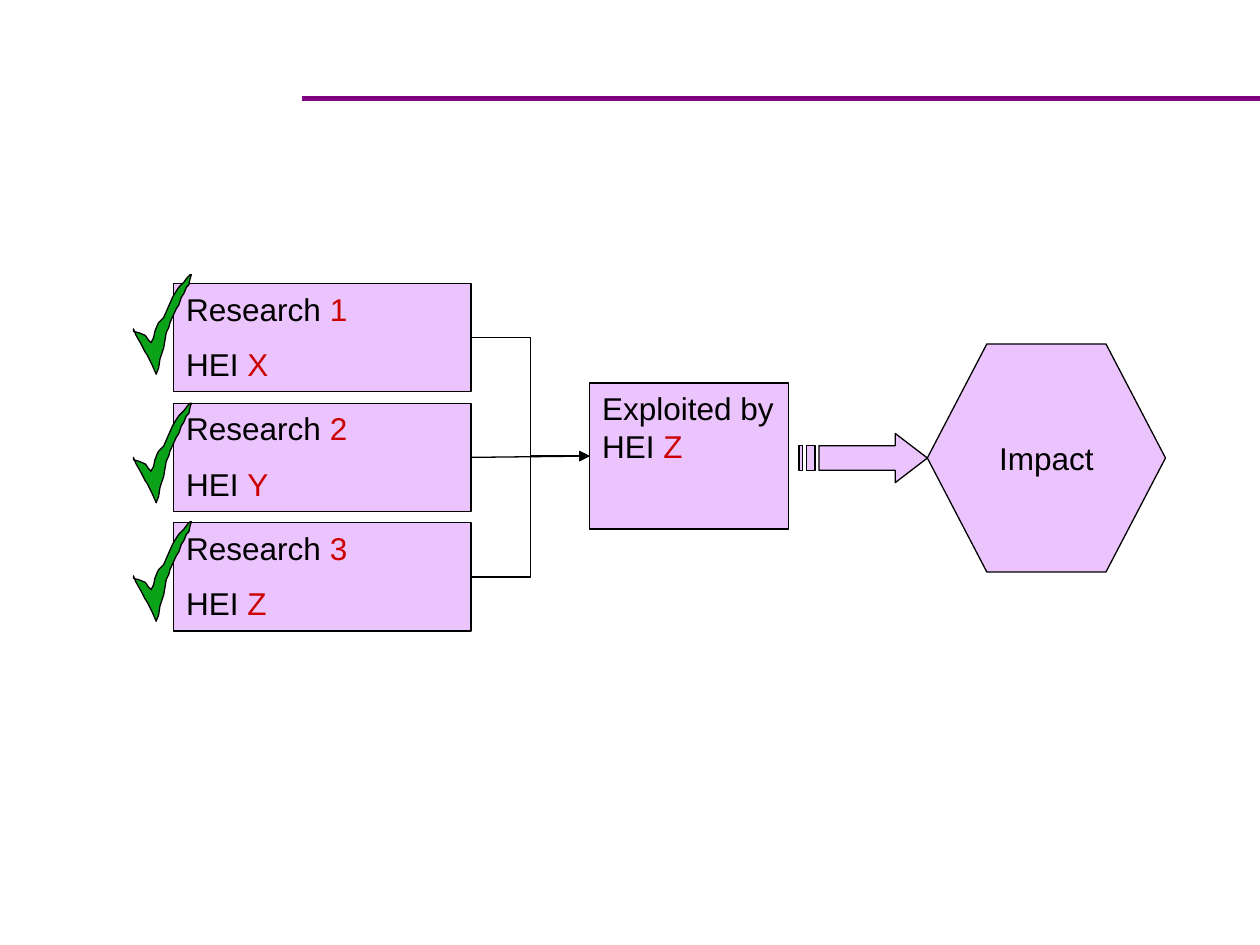
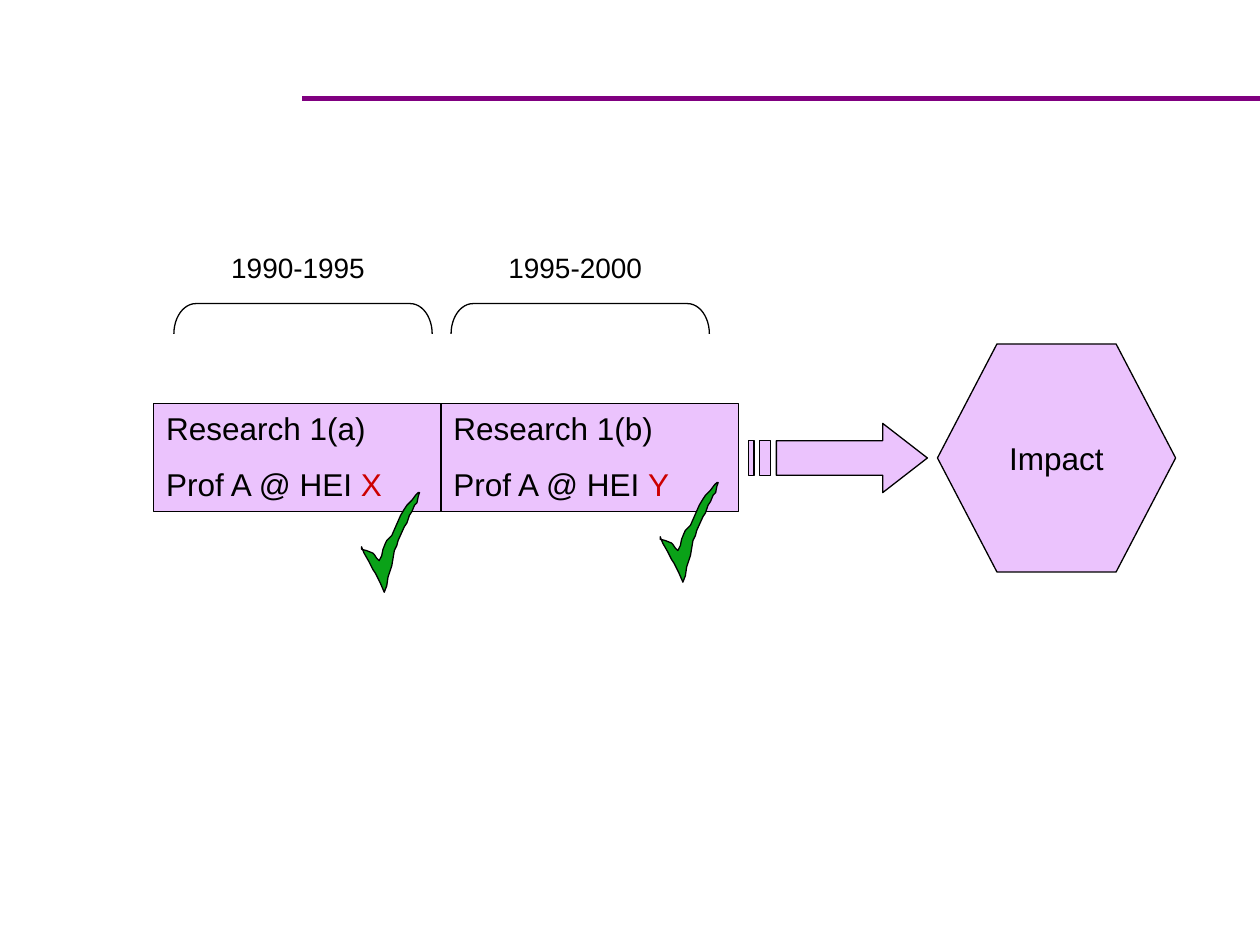
from lxml import etree
from pptx import Presentation
from pptx import util as u
from pptx.dml.color import RGBColor
from pptx.enum import shapes as kinds, text
from pptx.oxml.ns import qn

FONT = "Arial"
BLACK, RED, LILAC, GREEN, PURPLE = "000000", "CC0000", "EBC3FD", "0AA218", "800080"
RULE = (2.4, 0.78, 10, 0.78)

# Each box: left, top, width, height, paragraphs; a run is (words, colour)
RESEARCH_TOP, RESEARCH_STEP = 2.25, 0.95
RESEARCH = [("1", "X", 2.18), ("2", "Y", 3.2), ("3", "Z", 4.14)]  # number, HEI, tick top
TICK_LEFT = 1.06
EXPLOITED = (4.68, 3.04, 1.58, 1.16, [[("Exploited by HEI ", BLACK), ("Z", RED)]])

# Each period: part, HEI, box left, box width, years, bracket left, tick left, tick top
PERIODS = [
    ("a", "X", 1.22, 2.28, "1990-1995", 1.38, 2.87, 3.91),
    ("b", "Y", 3.5, 2.36, "1995-2000", 3.58, 5.24, 3.83),
]
PERIOD_TOP, BOX_HEIGHT = 3.2, 0.86
BRACKET_TOP, BRACKET_WIDTH, BRACKET_DEPTH = 2.41, 2.05, 0.24
YEARS_INDENT, YEARS_TOP, YEARS_WIDTH, YEARS_HEIGHT = 0.16, 1.94, 1.65, 0.37

# Tick outline in hundredths of an inch from its top left corner
TICK = [
    (0, 43), (2, 48), (6, 55), (9, 61), (11, 64), (13, 68), (15, 72), (18, 79),
    (20, 74), (21, 67), (24, 58), (26, 46), (27, 44), (28, 42), (29, 38), (34, 27),
    (36, 24), (38, 18), (40, 15), (42, 10), (44, 8), (45, 3), (46, 0), (45, 0),
    (43, 2), (40, 6), (36, 10), (34, 13), (31, 18), (24, 34), (22, 36), (20, 38),
    (19, 40), (17, 45), (16, 50), (14, 54), (12, 52), (10, 49), (9, 48), (4, 46),
    (0, 45),
]


def colour(hex_code):
    return RGBColor.from_string(hex_code)


def inches(*lengths):
    return [u.Inches(length) for length in lengths]


def paint(shape, fill=LILAC):
    shape.shadow.inherit = False
    if fill:
        shape.fill.solid()
        shape.fill.fore_color.rgb = colour(fill)
    else:
        shape.fill.background()
    shape.line.color.rgb = colour(BLACK)
    shape.line.width = u.Pt(0.75)


def write(frame, paragraphs, size=18, align=text.PP_ALIGN.LEFT):
    for index, runs in enumerate(paragraphs):
        paragraph = frame.add_paragraph() if index else frame.paragraphs[0]
        paragraph.alignment = align
        if index:
            paragraph.space_before = u.Pt(10)
        for words, shade in runs:
            run = paragraph.add_run()
            run.text = words
            run.font.name = FONT
            run.font.size = u.Pt(size)
            run.font.color.rgb = colour(shade)


def add_box(slide, left, top, width, height, paragraphs):
    box = slide.shapes.add_shape(kinds.MSO_SHAPE.RECTANGLE, *inches(left, top, width, height))
    paint(box)
    box.text_frame.vertical_anchor = text.MSO_ANCHOR.TOP
    write(box.text_frame, paragraphs)
    return box


def add_line(slide, kind, ends, shade, width):
    line = slide.shapes.add_connector(kind, *inches(*ends))
    line.line.color.rgb = colour(shade)
    line.line.width = u.Pt(width)
    etree.SubElement(line._element.spPr, qn("a:effectLst"))
    return line


def link(slide, source, target, kind):
    """Arrow from the right side of source to the left side of target."""
    arrow = add_line(slide, kind, (0, 0, 1, 1), BLACK, 0.75)
    arrow.begin_connect(source, 3)
    arrow.end_connect(target, 1)
    etree.SubElement(arrow.line._get_or_add_ln(), qn("a:tailEnd"), type="triangle")


def add_outline(slide, contours, fill):
    """Closed outline from contours of (x, y) points in inches."""
    contours = [[inches(*point) for point in contour] for contour in contours]
    builder = slide.shapes.build_freeform(*contours[0][0])
    for index, (start, *rest) in enumerate(contours):
        if index:
            builder.move_to(*start)
        builder.add_line_segments(rest, close=True)
    paint(builder.convert_to_shape(), fill)


def add_tick(slide, left, top):
    add_outline(slide, [[(left + x / 100, top + y / 100) for x, y in TICK]], GREEN)


def add_striped_arrow(slide, left, top, width, height):
    def bar(start, end):
        return [(start, 1 / 4), (start, 3 / 4), (end, 3 / 4), (end, 1 / 4)]

    head = [(3 / 4, 0), (3 / 4, 1 / 4), (5 / 32, 1 / 4), (5 / 32, 3 / 4),
            (3 / 4, 3 / 4), (3 / 4, 1), (1, 1 / 2)]
    parts = [head, bar(1 / 16, 1 / 8), bar(0, 1 / 32)]
    add_outline(slide, [[(left + x * width, top + y * height) for x, y in part]
                        for part in parts], LILAC)


def add_impact(slide, left):
    impact = slide.shapes.add_shape(kinds.MSO_SHAPE.HEXAGON, *inches(left, 2.73, 1.89, 1.81))
    impact.adjustments[0] = 0.261
    paint(impact)
    impact.text_frame.word_wrap = False
    impact.text_frame.vertical_anchor = text.MSO_ANCHOR.MIDDLE
    write(impact.text_frame, [[("Impact", BLACK)]], align=text.PP_ALIGN.CENTER)


def add_bracket(slide, left):
    """Upright left bracket turned a quarter so that it opens downwards."""
    middle_x = left + BRACKET_WIDTH / 2
    middle_y = BRACKET_TOP + BRACKET_DEPTH / 2
    bracket = slide.shapes.add_shape(
        kinds.MSO_SHAPE.LEFT_BRACKET,
        *inches(middle_x - BRACKET_DEPTH / 2, middle_y - BRACKET_WIDTH / 2,
                BRACKET_DEPTH, BRACKET_WIDTH))
    bracket.rotation = 90
    bracket.adjustments[0] = 0.723
    paint(bracket, None)


def add_years(slide, left, years):
    label = slide.shapes.add_textbox(*inches(left, YEARS_TOP, YEARS_WIDTH, YEARS_HEIGHT))
    label.text_frame.word_wrap = True
    write(label.text_frame, [[(years, BLACK)]], 16, text.PP_ALIGN.CENTER)


def new_slide(deck):
    slide = deck.slides.add_slide(deck.slide_layouts[6])
    add_line(slide, kinds.MSO_CONNECTOR.STRAIGHT, RULE, PURPLE, 3)
    return slide


def build_joint_research(deck):
    slide = new_slide(deck)
    sources = []
    for row, (number, hei, _) in enumerate(RESEARCH):
        sources.append(add_box(
            slide, 1.38, RESEARCH_TOP + row * RESEARCH_STEP, 2.36, BOX_HEIGHT,
            [[("Research ", BLACK), (number, RED)], [("HEI ", BLACK), (hei, RED)]]))
    add_impact(slide, 7.36)
    exploited = add_box(slide, *EXPLOITED)
    elbow, straight = kinds.MSO_CONNECTOR.ELBOW, kinds.MSO_CONNECTOR.STRAIGHT
    for source, kind in zip(sources, (elbow, straight, elbow)):
        link(slide, source, exploited, kind)
    add_striped_arrow(slide, 6.34, 3.44, 1.02, 0.39)
    for _, _, tick_top in RESEARCH:
        add_tick(slide, TICK_LEFT, tick_top)


def build_moving_researcher(deck):
    slide = new_slide(deck)
    add_striped_arrow(slide, 5.94, 3.36, 1.42, 0.55)
    for part, hei, left, width, years, bracket_left, tick_left, tick_top in PERIODS:
        add_box(slide, left, PERIOD_TOP, width, BOX_HEIGHT,
                [[(f"Research 1({part})", BLACK)], [("Prof A @ HEI ", BLACK), (hei, RED)]])
        add_bracket(slide, bracket_left)
        add_years(slide, bracket_left + YEARS_INDENT, years)
    add_impact(slide, 7.44)
    for *_, tick_left, tick_top in PERIODS:
        add_tick(slide, tick_left, tick_top)


def main():
    deck = Presentation()
    deck.slide_width, deck.slide_height = inches(10, 7.5)
    build_joint_research(deck)
    build_moving_researcher(deck)
    deck.save("out.pptx")


if __name__ == "__main__":
    main()
